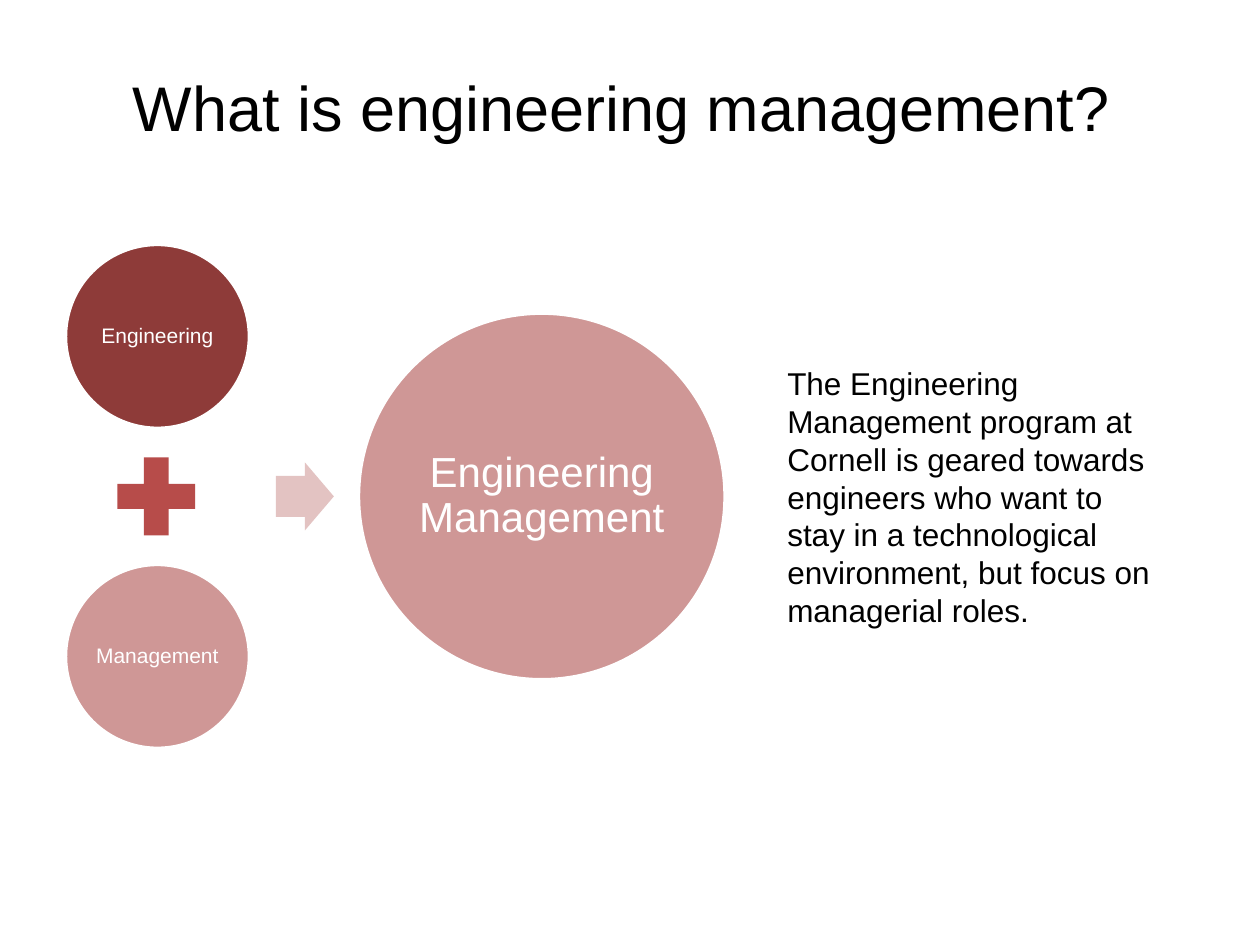
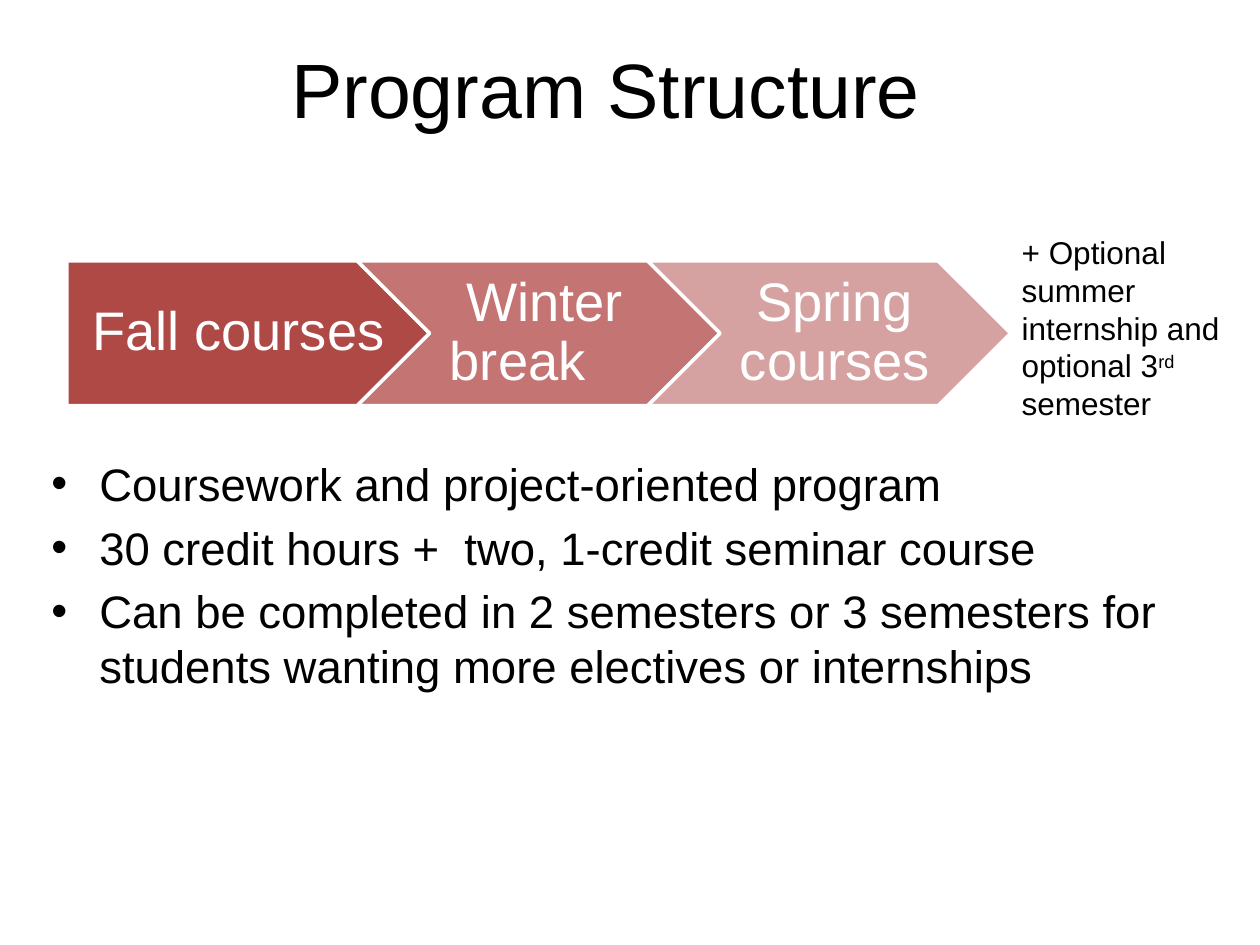
from lxml import etree
from pptx import Presentation
from pptx.dml.color import RGBColor
from pptx.enum.shapes import MSO_SHAPE
from pptx.enum.text import MSO_ANCHOR, MSO_AUTO_SIZE, PP_ALIGN
from pptx.oxml.ns import qn
from pptx.util import Inches, Pt

OVAL, PLUS, ARROW = MSO_SHAPE.OVAL, MSO_SHAPE.MATH_PLUS, MSO_SHAPE.RIGHT_ARROW
PENTAGON, CHEVRON = MSO_SHAPE.PENTAGON, MSO_SHAPE.CHEVRON
TOP, MIDDLE = MSO_ANCHOR.TOP, MSO_ANCHOR.MIDDLE
LEFT, CENTER = PP_ALIGN.LEFT, PP_ALIGN.CENTER

FONT, BLACK, WHITE = "Arial", "000000", "FFFFFF"
TITLE_SIZE = (9, 1.25)

# Sum diagram: shape, centre x, offset from the middle line, width, height, fill, text, size
DIAGRAM_MIDDLE = 3.94
SUM_PARTS = [
    (OVAL, 1.25, -1.27, 1.46, 1.46, "8E3B39", "Engineering", 12),
    (PLUS, 1.24, 0, 0.84, 0.84, "B74C4A", "", 0),
    (OVAL, 1.25, 1.27, 1.46, 1.46, "CF9796", "Management", 12),
    (ARROW, 2.42, 0, 0.46, 0.54, "E3C3C2", "", 0),
    (OVAL, 4.3, 0, 2.91, 2.91, "CF9796", "Engineering Management ", 24),
]
PROGRAM_TEXT = ("The Engineering Management program at Cornell is geared towards "
                "engineers who want to stay in a technological environment, "
                "but focus on managerial roles.")

# Timeline: shape, fill, text, left inset
STEPS = [
    (PENTAGON, "AE4946", "Fall courses", 0.18),
    (CHEVRON, "C47472", "Winter break\t", 0.14),
    (CHEVRON, "D6A2A1", "Spring courses", 0.14),
]
STEP_LEFT, STEP_TOP, STEP_W, STEP_H = 0.53, 2.07, 2.88, 1.15
STEP_PITCH = STEP_W - STEP_H / 2  # each point fits the next notch
OPTIONAL_NOTE = [("+ Optional summer internship and optional 3", 0),
                 ("rd", 30000), (" semester", 0)]
BULLETS = [
    "Coursework and project-oriented program",
    "30 credit hours +  two, 1-credit seminar course",
    "Can be completed in 2 semesters or 3 semesters for students wanting "
    "more electives or internships",
]


def rgb(color):
    return RGBColor.from_string(color)


def inches(*lengths):
    return [Inches(n) for n in lengths]


def set_frame(tf, anchor=TOP, insets=(0.1, 0.05, 0.1, 0.05)):
    tf.word_wrap = True
    tf.auto_size = MSO_AUTO_SIZE.NONE
    tf.vertical_anchor = anchor
    for side, inset in zip(("left", "top", "right", "bottom"), insets):
        setattr(tf, f"margin_{side}", Inches(inset))


def write(p, text, size, color=BLACK, align=LEFT, baseline=0):
    p.alignment = align
    r = p.add_run()
    r.text = text
    for name, value in {"name": FONT, "size": Pt(size), "bold": False}.items():
        setattr(r.font, name, value)
    r.font.color.rgb = rgb(color)
    if baseline:
        r._r.get_or_add_rPr().set("baseline", str(baseline))


def add_bullet(p, indent=0.38):
    pPr = p._p.get_or_add_pPr()
    pPr.set("marL", str(Inches(indent)))
    pPr.set("indent", str(-Inches(indent)))
    etree.SubElement(pPr, qn("a:buFont")).set("typeface", FONT)
    etree.SubElement(pPr, qn("a:buChar")).set("char", "•")


def add_titled_slide(prs, text, size, left, top):
    s = prs.slides.add_slide(prs.slide_layouts[5])
    title = s.shapes.title
    title.left, title.top, title.width, title.height = inches(left, top, *TITLE_SIZE)
    set_frame(title.text_frame)
    write(title.text_frame.paragraphs[0], text, size, align=CENTER)
    return s


def add_text_box(s, box, anchor=TOP):
    tf = s.shapes.add_textbox(*inches(*box)).text_frame
    set_frame(tf, anchor)
    return tf


def add_filled(s, kind, box, fill, text, size, insets):
    """Add a filled shape; one with text also gets a white outline."""
    sp = s.shapes.add_shape(kind, *inches(*box))
    sp.shadow.inherit = False
    sp.fill.solid()
    sp.fill.fore_color.rgb = rgb(fill)
    if not text:
        sp.line.fill.background()
        return sp
    sp.line.color.rgb = rgb(WHITE)
    sp.line.width = Pt(2)
    set_frame(sp.text_frame, MIDDLE, insets)
    p = sp.text_frame.paragraphs[0]
    p.line_spacing = 0.9
    write(p, text, size, WHITE, CENTER)
    return sp


def build_definition(prs):
    s = add_titled_slide(prs, "What is engineering management? ", 36, 0.5, 0.49)
    for kind, x, offset, w, h, fill, text, size in SUM_PARTS:
        box = (x - w / 2, DIAGRAM_MIDDLE + offset - h / 2, w, h)
        sp = add_filled(s, kind, box, fill, text, size, (0.02,) * 4)
        if kind == ARROW:
            sp.adjustments[0] = 0.6
    tf = add_text_box(s, (6.15, 2.35, 3.18, 3.18), MIDDLE)
    write(tf.paragraphs[0], PROGRAM_TEXT, 18)


def build_structure(prs):
    s = add_titled_slide(prs, "Program Structure", 44, 0.31, 0.28)
    for i, (kind, fill, text, inset) in enumerate(STEPS):
        box = (STEP_LEFT + i * STEP_PITCH, STEP_TOP, STEP_W, STEP_H)
        add_filled(s, kind, box, fill, text, 31, (inset, 0.09, 0.05, 0.09))

    tf = add_text_box(s, (0.31, 3.57, 9, 3.5))
    for i, text in enumerate(BULLETS):
        p = tf.add_paragraph() if i else tf.paragraphs[0]
        add_bullet(p)
        if i:
            p.space_before = Pt(5.2)
        write(p, text, 26)

    p = add_text_box(s, (8.01, 1.8, 1.99, 1.62)).paragraphs[0]
    for text, baseline in OPTIONAL_NOTE:
        write(p, text, 18, baseline=baseline)


def main():
    prs = Presentation()
    prs.slide_width, prs.slide_height = inches(10, 7.5)
    build_definition(prs)
    build_structure(prs)
    prs.save("out.pptx")


if __name__ == "__main__":
    main()
